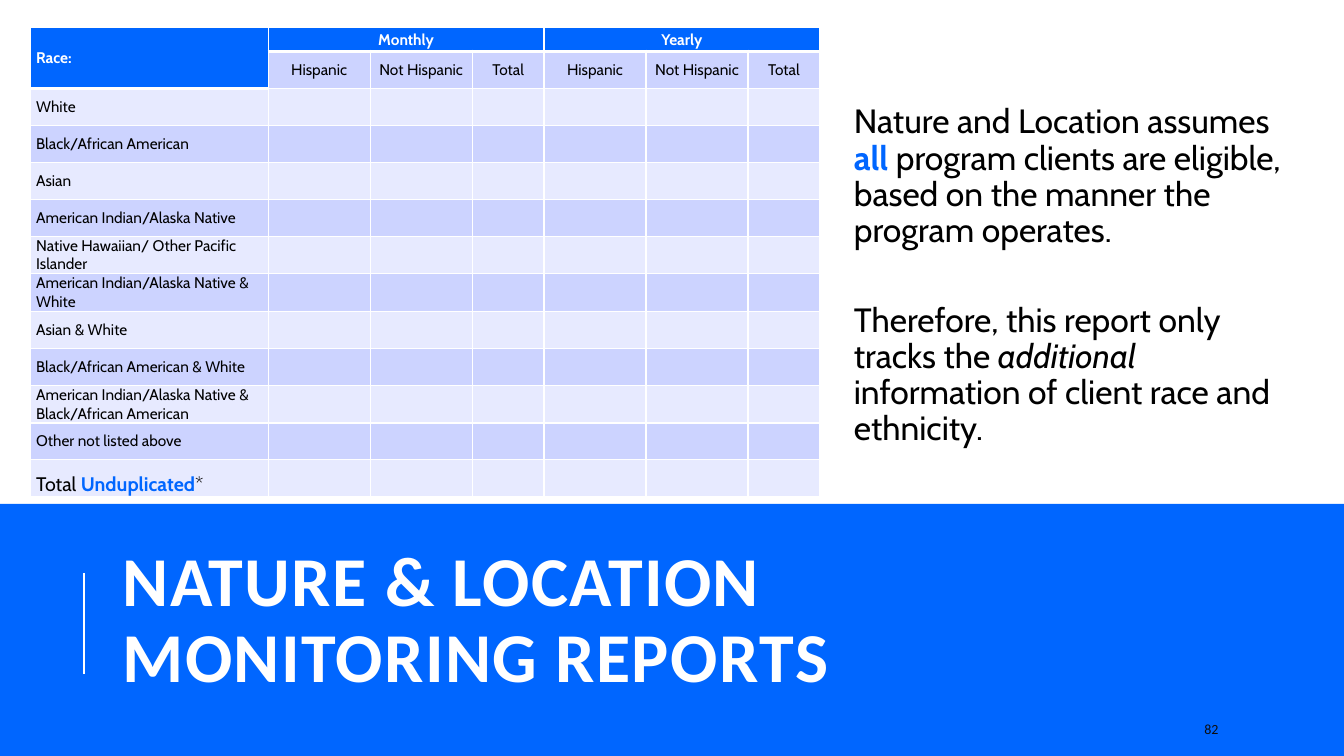
from dataclasses import dataclass
from typing import Optional

import pptx
import pptx.dml.color
import pptx.enum.shapes
import pptx.enum.text
import pptx.oxml
import pptx.oxml.ns
import pptx.util
from pptx.util import Cm

ALIGN = pptx.enum.text.PP_ALIGN
ANCHOR = pptx.enum.text.MSO_ANCHOR


@dataclass(frozen=True)
class Theme:
    blue: str = "0066FF"
    white: str = "FFFFFF"
    black: str = "000000"
    number_ink: str = "0D0D0D"
    band_dark: str = "CCD3FF"
    band_light: str = "E7EAFF"
    body_font: str = "Cabin"
    title_font: str = "Calibri"
    title_size: float = 50
    body_size: float = 24
    total_size: float = 14
    table_size: float = 11
    number_size: float = 10


THEME = Theme()


@dataclass(frozen=True)
class Run:
    text: str
    color: Optional[str] = None
    bold: bool = False
    italic: bool = False


@dataclass(frozen=True)
class Box:
    left: float
    top: float
    width: float
    height: float

    def lengths(self) -> tuple:
        return Cm(self.left), Cm(self.top), Cm(self.width), Cm(self.height)


def rgb(color: str) -> pptx.dml.color.RGBColor:
    return pptx.dml.color.RGBColor.from_string(color)


def write(frame, paragraphs: list, *, size: float, font: str = THEME.body_font,
          color: str = THEME.black, bold: bool = False, align=ALIGN.LEFT,
          line_spacing: float = 1.0, after: float = 0, gap: float = 0,
          tracking: float = 0) -> None:
    """Fill a text frame; each paragraph is a list of runs."""
    for index, runs in enumerate(paragraphs):
        paragraph = frame.paragraphs[0] if index == 0 else frame.add_paragraph()
        paragraph.alignment = align
        paragraph.line_spacing = line_spacing
        paragraph.space_before = pptx.util.Pt(gap if index else 0)
        paragraph.space_after = pptx.util.Pt(after)
        for part in runs:
            run = paragraph.add_run()
            run.text = part.text
            run.font.name = font
            run.font.size = pptx.util.Pt(size)
            run.font.bold = bold or part.bold
            run.font.italic = part.italic
            run.font.color.rgb = rgb(part.color or color)
            if tracking:
                run.font._element.set("spc", str(round(tracking * 100)))


def set_up_frame(frame, margin: Optional[float] = None) -> None:
    frame.word_wrap = True
    frame.auto_size = pptx.enum.text.MSO_AUTO_SIZE.NONE
    frame.vertical_anchor = ANCHOR.MIDDLE
    if margin is not None:
        frame.margin_left = frame.margin_right = Cm(margin)
        frame.margin_top = frame.margin_bottom = Cm(margin)


def add_text(slide, box: Box, paragraphs: list, margin: Optional[float] = None,
             **text_format) -> None:
    frame = slide.shapes.add_textbox(*box.lengths()).text_frame
    set_up_frame(frame, margin)
    write(frame, paragraphs, **text_format)


def style_cell(cell, fill: str, bottom_width: float) -> None:
    cell.margin_left = cell.margin_right = Cm(0.15)
    cell.margin_top = cell.margin_bottom = Cm(0)
    cell.vertical_anchor = ANCHOR.MIDDLE
    cell.fill.solid()
    cell.fill.fore_color.rgb = rgb(fill)
    properties = cell._tc.get_or_add_tcPr()
    widths = {"lnL": 1, "lnR": 1, "lnT": 1, "lnB": bottom_width}
    for position, (side, width) in enumerate(widths.items()):
        properties.insert(position, pptx.oxml.parse_xml(
            f'<a:{side} {pptx.oxml.ns.nsdecls("a")} w="{pptx.util.Pt(width)}">'
            f'<a:solidFill><a:srgbClr val="{THEME.white}"/></a:solidFill></a:{side}>'))


# Race table content
PERIODS = ["Monthly", "Yearly"]
COUNTS = ["Hispanic", "Not Hispanic", "Total"]
COUNT_WIDTHS = [2.57, 2.57, 1.81]
RACES = [
    "White",
    "Black/African American",
    "Asian",
    "American Indian/Alaska Native",
    "Native Hawaiian/ Other Pacific Islander",
    "American Indian/Alaska Native & White",
    "Asian & White",
    "Black/African American & White",
    "American Indian/Alaska Native & Black/African American",
    "Other not listed above",
]
TOTAL = [Run("Total "), Run("Unduplicated", THEME.blue, bold=True), Run("*")]


def add_race_table(slide) -> None:
    widths = [6.0] + COUNT_WIDTHS * len(PERIODS)
    heights = [0.61] + [0.93] * (len(RACES) + 2)
    box = Box(0.76, 0.69, sum(widths), sum(heights))
    table = slide.shapes.add_table(len(heights), len(widths), *box.lengths()).table
    table.first_row = table.horz_banding = False
    for column, width in zip(table.columns, widths):
        column.width = Cm(width)
    for row, height in zip(table.rows, heights):
        row.height = Cm(height)

    # Fills and borders
    for r in range(len(heights)):
        for c in range(len(widths)):
            header = r == 0 or (r == 1 and c == 0)
            band = THEME.band_dark if r % 2 else THEME.band_light
            style_cell(table.cell(r, c), THEME.blue if header else band,
                       3 if header else 1)

    # Header rows
    heading = dict(size=THEME.table_size, color=THEME.white, bold=True)
    race = table.cell(0, 0)
    race.merge(table.cell(1, 0))
    write(race.text_frame, [[Run("Race:")]], **heading)
    for p, period in enumerate(PERIODS):
        first = 1 + p * len(COUNTS)
        period_cell = table.cell(0, first)
        period_cell.merge(table.cell(0, first + len(COUNTS) - 1))
        write(period_cell.text_frame, [[Run(period)]], align=ALIGN.CENTER, **heading)
        for c, count in enumerate(COUNTS, start=first):
            write(table.cell(1, c).text_frame, [[Run(count)]],
                  size=THEME.table_size, align=ALIGN.CENTER)

    # Race rows and total
    for r, name in enumerate(RACES, start=2):
        write(table.cell(r, 0).text_frame, [[Run(name)]], size=THEME.table_size)
    total = table.cell(len(heights) - 1, 0)
    total.vertical_anchor = ANCHOR.BOTTOM
    write(total.text_frame, [TOTAL], size=THEME.total_size)


def add_title_band(slide) -> None:
    shapes = slide.shapes
    band = shapes.add_shape(pptx.enum.shapes.MSO_SHAPE.RECTANGLE,
                            *Box(0, 12.7, 33.87, 6.35).lengths())
    band.shadow.inherit = False
    band.fill.solid()
    band.fill.fore_color.rgb = rgb(THEME.blue)
    band.line.fill.background()

    title = shapes.title
    title.element.addprevious(band.element)
    title.left, title.top, title.width, title.height = Box(2.84, 13.64, 27, 4.17).lengths()
    set_up_frame(title.text_frame)
    write(title.text_frame, [[Run("NATURE & LOCATION")], [Run("MONITORING REPORTS")]],
          size=THEME.title_size, font=THEME.title_font, color=THEME.white, bold=True,
          line_spacing=0.8, after=6, tracking=1)

    rule = shapes.add_connector(pptx.enum.shapes.MSO_CONNECTOR.STRAIGHT,
                                Cm(2.11), Cm(16.99), Cm(2.11), Cm(14.45))
    rule.line.color.rgb = rgb(THEME.white)
    rule.line.width = pptx.util.Pt(1.5)
    rule.element.spPr.append(pptx.oxml.parse_xml(
        f'<a:effectLst {pptx.oxml.ns.nsdecls("a")}/>'))


def main() -> None:
    deck = pptx.Presentation()
    deck.slide_width, deck.slide_height = Cm(33.87), Cm(19.05)
    slide = deck.slides.add_slide(deck.slide_layouts.get_by_name("Title Only"))

    add_title_band(slide)

    # Explanation beside the table
    add_text(slide, Box(21.39, 1.96, 11.71, 10.01), [
        [Run("Nature and Location assumes "), Run("all", THEME.blue, bold=True),
         Run(" program clients are eligible, based on the manner the program operates.")],
        [Run("Therefore, this report only tracks the "), Run("additional", italic=True),
         Run(" information of client race and ethnicity.")],
    ], margin=0.13, size=THEME.body_size, line_spacing=0.9, after=6, gap=32)

    # Slide number
    add_text(slide, Box(30.1, 17.98, 2.69, 0.76), [[Run("82")]], size=THEME.number_size,
             font=THEME.title_font, color=THEME.number_ink, after=6)

    add_race_table(slide)
    deck.save("out.pptx")


if __name__ == "__main__":
    main()
